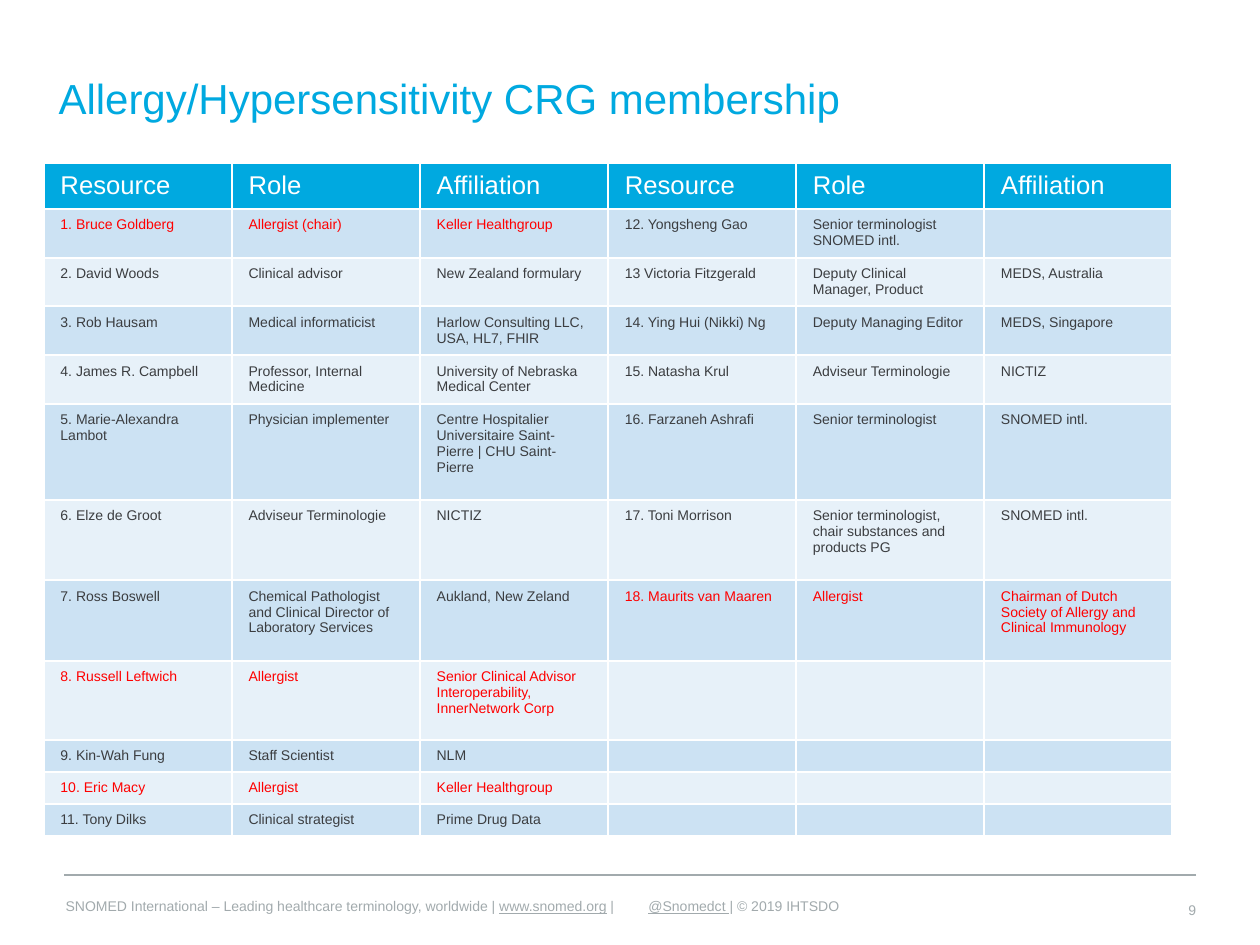
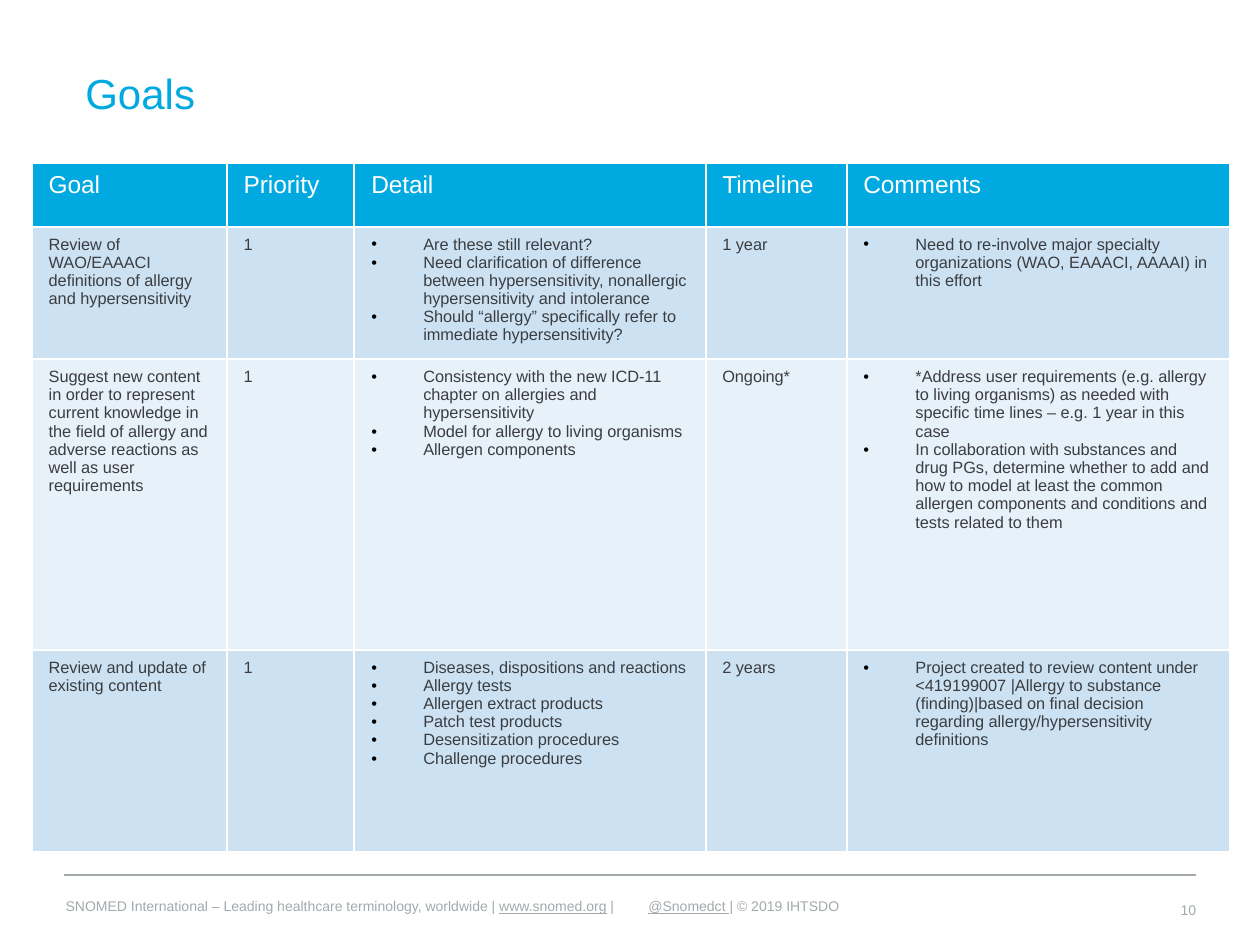
import pptx
import pptx.util
import pptx.dml.color
import pptx.enum.shapes
import pptx.enum.text
import pptx.oxml.ns
from lxml import etree

# Shared look
COLOURS = {"accent": "00A9E0", "footer": "A2AAAD", "body": "3B3D40", "allergist": "FF0000",
           "white": "FFFFFF", "band": "CCE2F3", "light_band": "E7F1F9", "bullet": "000000"}
FONT = "Arial"
GRID_UNIT = pptx.util.Inches(0.01)
GRID_COLUMNS, GRID_ROWS = 750, 562.5
BULLET_INDENT = 31
SIDE_MARGIN, TOP_MARGIN, BOTTOM_MARGIN = 10, 5, 4

# Membership content: resource, role, affiliation
MEMBERS = [
    ("1. Bruce Goldberg", "Allergist (chair)", "Keller Healthgroup"),
    ("2. David Woods", "Clinical advisor", "New Zealand formulary"),
    ("3. Rob Hausam", "Medical informaticist", "Harlow Consulting LLC, USA, HL7, FHIR"),
    ("4. James R. Campbell", "Professor, Internal Medicine", "University of Nebraska Medical Center"),
    ("5. Marie-Alexandra Lambot", "Physician implementer",
     "Centre Hospitalier Universitaire Saint-Pierre | CHU Saint-Pierre"),
    ("6. Elze de Groot", "Adviseur Terminologie", "NICTIZ"),
    ("7. Ross Boswell", "Chemical Pathologist and Clinical Director of Laboratory Services",
     "Aukland, New Zeland"),
    ("8. Russell Leftwich", "Allergist", "Senior Clinical Advisor Interoperability, InnerNetwork Corp"),
    ("9. Kin-Wah Fung", "Staff Scientist", "NLM"),
    ("10. Eric Macy", "Allergist", "Keller Healthgroup"),
    ("11. Tony Dilks", "Clinical strategist", "Prime Drug Data"),
    ("12. Yongsheng Gao", "Senior terminologist SNOMED intl.", ""),
    ("13 Victoria Fitzgerald", "Deputy Clinical Manager, Product", "MEDS, Australia"),
    ("14. Ying Hui (Nikki) Ng", "Deputy Managing Editor", "MEDS, Singapore"),
    ("15. Natasha Krul", "Adviseur Terminologie", "NICTIZ"),
    ("16. Farzaneh Ashrafi", "Senior terminologist", "SNOMED intl."),
    ("17. Toni Morrison", "Senior terminologist, chair substances and products PG", "SNOMED intl."),
    ("18. Maurits van Maaren", "Allergist", "Chairman of Dutch Society of Allergy and Clinical Immunology"),
]
MEMBER_ROWS = 11

# Goals content: a list in a cell becomes bullets
GOALS = [
    ("Goal", "Priority", "Detail", "Timeline", "Comments"),
    ("Review of WAO/EAAACI definitions of allergy and hypersensitivity", "1",
     ["Are these still relevant?",
      "Need clarification of difference between hypersensitivity, nonallergic hypersensitivity and intolerance",
      "Should “allergy” specifically refer to immediate hypersensitivity?"],
     "1 year",
     ["Need to re-involve major specialty organizations (WAO, EAAACI, AAAAI) in this effort"]),
    ("Suggest new content in order to represent current knowledge in the field of allergy "
     "and adverse reactions as well as user requirements", "1",
     ["Consistency with the new ICD-11 chapter on allergies and hypersensitivity",
      "Model for allergy to living organisms",
      "Allergen components"],
     "Ongoing*",
     ["*Address user requirements (e.g. allergy to living organisms) as needed with specific "
      "time lines – e.g. 1 year in this case",
      "In collaboration with substances and drug PGs, determine whether to add and how to model "
      "at least the common allergen components and conditions and tests related to them"]),
    ("Review and update of existing content", "1",
     ["Diseases, dispositions and reactions", "Allergy tests", "Allergen extract products",
      "Patch test products", "Desensitization procedures", "Challenge procedures"],
     "2 years",
     ["Project created to review content under <419199007 |Allergy to substance (finding)|based on "
      "final decision regarding allergy/hypersensitivity definitions"]),
]


def grid(*counts):
    return [round(count * GRID_UNIT) for count in counts]


def colour(name):
    return pptx.dml.color.RGBColor.from_string(COLOURS[name])


def add_element(parent, tag, **attributes):
    return etree.SubElement(parent, pptx.oxml.ns.qn(tag), **attributes)


def format_run(run, size, colour_name, underline=None):
    run.font.name = FONT
    run.font.size = pptx.util.Pt(size)
    run.font.color.rgb = colour(colour_name)
    run.font.underline = underline


def add_text(slide, box, pieces, size, colour_name, inset=0, align=None):
    """Add one line of text; pieces are (text, underline) pairs."""
    frame = slide.shapes.add_textbox(*grid(*box)).text_frame
    frame.word_wrap = True
    frame.vertical_anchor = pptx.enum.text.MSO_ANCHOR.MIDDLE
    frame.margin_left, frame.margin_top, frame.margin_right, frame.margin_bottom = grid(*[inset] * 4)
    paragraph = frame.paragraphs[0]
    paragraph.alignment = align
    for text, underline in pieces:
        run = paragraph.add_run()
        run.text = text
        format_run(run, size, colour_name, underline)


def add_footer(slide, number):
    line = slide.shapes.add_connector(pptx.enum.shapes.MSO_CONNECTOR.STRAIGHT, *grid(712, 521, 38, 521))
    line.line.color.rgb = colour("footer")
    line.line.width = pptx.util.Pt(0.75)
    add_element(line._element.spPr, "a:effectLst")
    add_text(slide, (39, 524, 338, 31),
             [("SNOMED International – Leading healthcare terminology, worldwide | ", None),
              ("www.snomed.org", True), (" |", None)], 6, "footer")
    add_text(slide, (386, 524, 150, 31), [("@Snomedct ", True), ("| © 2019 IHTSDO", None)], 6, "footer")
    add_text(slide, (676, 521, 36, 41), [(str(number), None)], 6, "footer",
             align=pptx.enum.text.PP_ALIGN.RIGHT)


def add_slide(presentation, title, title_left, title_top, number):
    slide = presentation.slides.add_slide(presentation.slide_layouts[6])
    add_footer(slide, number)
    add_text(slide, (title_left, title_top, 675, 62), [(title, None)], 18, "accent", inset=10)
    return slide


def add_bullet(paragraph):
    properties = paragraph._p.get_or_add_pPr()
    indent = grid(BULLET_INDENT)[0]
    properties.set("marL", str(indent))
    properties.set("indent", str(-indent))
    add_element(add_element(properties, "a:buClr"), "a:srgbClr", val=COLOURS["bullet"])
    add_element(properties, "a:buFont", typeface=FONT)
    add_element(properties, "a:buChar", char="•")


def style_cell(cell, fill_name):
    cell.margin_left = cell.margin_right = grid(SIDE_MARGIN)[0]
    cell.margin_top, cell.margin_bottom = grid(TOP_MARGIN, BOTTOM_MARGIN)
    properties = cell._tc.get_or_add_tcPr()
    for side in "LRTB":
        border = add_element(properties, f"a:ln{side}", w=str(pptx.util.Pt(1)))
        add_element(add_element(border, "a:solidFill"), "a:srgbClr", val=COLOURS["white"])
    cell.fill.solid()
    cell.fill.fore_color.rgb = colour(fill_name)


def fill_cell(cell, content, size, colour_name):
    bulleted = isinstance(content, list)
    cell.text_frame.text = "\n".join(content) if bulleted else content
    for paragraph in cell.text_frame.paragraphs:
        if bulleted:
            add_bullet(paragraph)
        for run in paragraph.runs:
            format_run(run, size, colour_name)
        if not content:
            add_element(paragraph._p, "a:endParaRPr", sz=str(size * 100))


def add_table(slide, left, top, widths, heights, rows, header_size, body_size, body_colour):
    """Add a banded table; body_colour(row, column) names the text colour of a body cell."""
    frame = slide.shapes.add_table(len(rows), len(widths),
                                   *grid(left, top, sum(widths), sum(heights)))
    table = frame.table
    table.first_row = table.horz_banding = False
    for column, width in zip(table.columns, grid(*widths)):
        column.width = width
    for row, height in zip(table.rows, grid(*heights)):
        row.height = height
    for r, contents in enumerate(rows):
        for c, content in enumerate(contents):
            cell = table.cell(r, c)
            if r == 0:
                style_cell(cell, "accent")
                fill_cell(cell, content, header_size, "white")
            else:
                style_cell(cell, "band" if r % 2 else "light_band")
                fill_cell(cell, content, body_size, body_colour(contents, c))


def member_colour(row, column):
    role = row[column // 3 * 3 + 1]
    return "allergist" if role.startswith("Allergist") else "body"


def add_membership(presentation):
    slide = add_slide(presentation, "Allergy/Hypersensitivity CRG membership", 25, 27, 9)
    left_half, right_half = MEMBERS[:MEMBER_ROWS], MEMBERS[MEMBER_ROWS:]
    right_half = right_half + [("", "", "")] * (len(left_half) - len(right_half))
    rows = [("Resource", "Role", "Affiliation") * 2]
    rows += [left + right for left, right in zip(left_half, right_half)]
    heights = [27, 29, 29, 29, 28, 57, 48, 48, 47, 19, 19, 19]
    add_table(slide, 26, 97, [112] * 6, heights, rows, 11, 6, member_colour)


def add_goals(presentation):
    slide = add_slide(presentation, "Goals", 41, 24, 10)
    add_table(slide, 19, 97, [116, 76, 209, 84, 228], [38, 75, 173, 120], GOALS, 10.5, 7,
              lambda row, column: "body")


def main():
    presentation = pptx.Presentation()
    presentation.slide_width, presentation.slide_height = grid(GRID_COLUMNS, GRID_ROWS)
    add_membership(presentation)
    add_goals(presentation)
    presentation.save("out.pptx")


if __name__ == "__main__":
    main()
